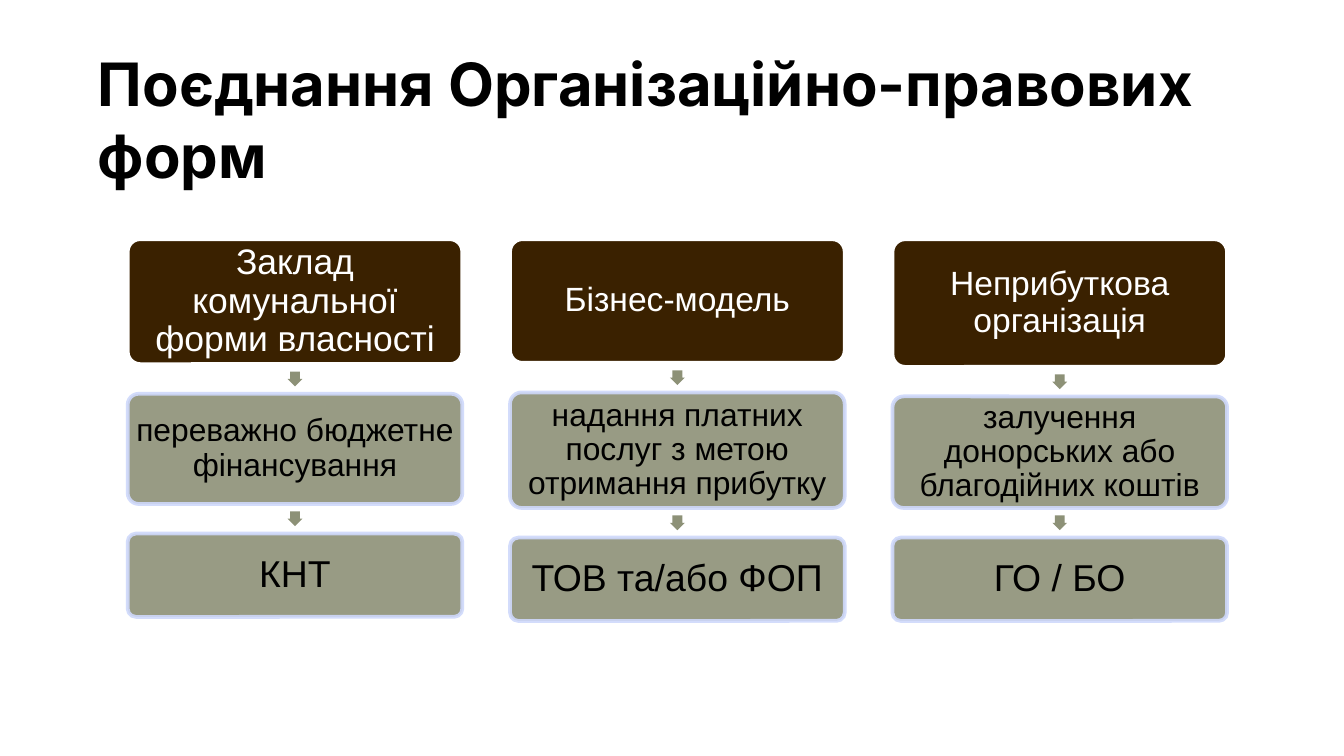
import pptx
import pptx.util
import pptx.dml.color
import pptx.enum.shapes
import pptx.enum.text
import pptx.oxml
import pptx.oxml.ns

BROWN, OLIVE, PALE_BLUE = "3A2100", "8D9177", "CFD9FB"
WHITE, BLACK = "FFFFFF", "000000"
SHAPES = pptx.enum.shapes.MSO_SHAPE
SLIDE_WIDTH = 10
SLIDE_HEIGHT = SLIDE_WIDTH * 9 / 16
COLUMNS_LEFT, COLUMNS_RIGHT, COLUMNS_TOP = 0.95, 9.13, 1.78
COLUMN_WIDTH = 2.49
STEP_GAP, ARROW_SIZE = 0.22, 0.11

# Each step: text, box height, text size
COLUMNS = [
    [("Заклад комунальної форми власності", 0.93, 19),
     ("переважно бюджетне фінансування", 0.82, 17),
     ("КНТ", 0.62, 20)],
    [("Бізнес-модель", 0.92, 18),
     ("надання платних послуг з метою отримання прибутку", 0.86, 17),
     ("ТОВ та/або ФОП", 0.62, 20)],
    [("Неприбуткова організація", 0.95, 18),
     ("залучення донорських або благодійних коштів", 0.83, 17),
     ("ГО / БО", 0.62, 20)],
]


def inches(*lengths):
    return [pptx.util.Inches(length) for length in lengths]


def paint(fill, color, opacity=100):
    """Make a fill solid; opacity is in percent."""
    fill.solid()
    fill.fore_color.rgb = pptx.dml.color.RGBColor.from_string(color)
    if opacity < 100:
        alpha = pptx.oxml.parse_xml(
            f'<a:alpha {pptx.oxml.ns.nsdecls("a")} val="{opacity * 1000}"/>')
        fill.fore_color._xFill[0].append(alpha)


def set_font(paragraph, name, size, color, bold=False):
    paragraph.font.name = name
    paragraph.font.size = pptx.util.Pt(size)
    paragraph.font.bold = bold
    paint(paragraph.font.fill, color)


def set_margins(frame, margin):
    frame.margin_left = frame.margin_right = pptx.util.Inches(margin)
    frame.margin_top = frame.margin_bottom = pptx.util.Inches(margin)


def add_title(slide, text, left, top, width, height):
    frame = slide.shapes.add_textbox(
        *inches(left, top, width, height)).text_frame
    frame.word_wrap = True
    set_margins(frame, 0.1)
    frame.text = text
    set_font(frame.paragraphs[0], "Inter", 32, BLACK, bold=True)


def add_step(slide, step, left, top, is_header):
    text, height, size = step
    box = slide.shapes.add_shape(
        SHAPES.ROUNDED_RECTANGLE, *inches(left, top, COLUMN_WIDTH, height))
    box.adjustments[0] = 0.1
    box.shadow.inherit = False
    opacity = 100 if is_header else 90
    paint(box.fill, BROWN if is_header else OLIVE, opacity)
    paint(box.line.fill, WHITE if is_header else PALE_BLUE, opacity)
    box.line.width = pptx.util.Pt(2)

    frame = box.text_frame
    frame.word_wrap = True
    frame.vertical_anchor = pptx.enum.text.MSO_ANCHOR.MIDDLE
    set_margins(frame, 0.02 if size == 17 else 0.03)
    frame.text = text
    paragraph = frame.paragraphs[0]
    paragraph.alignment = pptx.enum.text.PP_ALIGN.CENTER
    paragraph.line_spacing = 0.9
    set_font(paragraph, "Arial", size, WHITE if is_header else BLACK)


def add_down_arrow(slide, center_x, top):
    arrow = slide.shapes.add_shape(
        SHAPES.RIGHT_ARROW,
        *inches(center_x - ARROW_SIZE / 2, top, ARROW_SIZE, ARROW_SIZE))
    arrow.rotation = 90
    arrow.adjustments[0] = 0.67
    arrow.adjustments[1] = 0.5
    arrow.shadow.inherit = False
    paint(arrow.fill, OLIVE)
    arrow.line.fill.background()


def add_column(slide, steps, left, top):
    """Stack the steps downwards, with an arrow in each gap."""
    for index, step in enumerate(steps):
        if index:
            add_down_arrow(slide, left + COLUMN_WIDTH / 2,
                           top + (STEP_GAP - ARROW_SIZE) / 2)
            top += STEP_GAP
        add_step(slide, step, left, top, is_header=index == 0)
        top += step[1]


def main():
    presentation = pptx.Presentation()
    presentation.slide_width, presentation.slide_height = inches(
        SLIDE_WIDTH, SLIDE_HEIGHT)
    slide = presentation.slides.add_slide(presentation.slide_layouts[6])
    paint(slide.background.fill, WHITE)
    add_title(slide, "Поєднання Організаційно-правових форм",
              0.63, 0.25, 9.06, 1.28)
    pitch = (COLUMNS_RIGHT - COLUMNS_LEFT - COLUMN_WIDTH) / (len(COLUMNS) - 1)
    for index, steps in enumerate(COLUMNS):
        add_column(slide, steps, COLUMNS_LEFT + index * pitch, COLUMNS_TOP)
    presentation.save("out.pptx")


if __name__ == "__main__":
    main()
